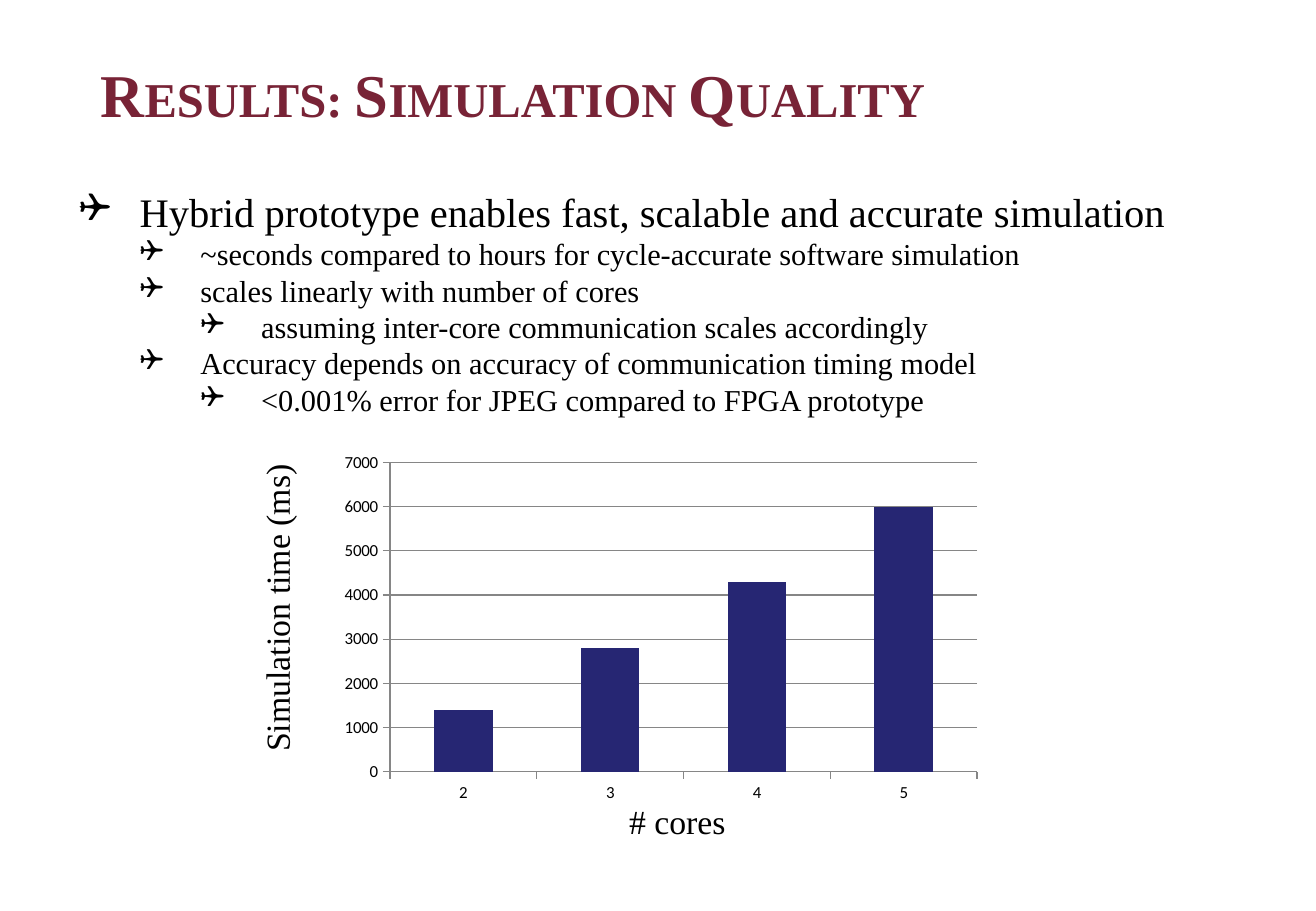
from dataclasses import dataclass

import pptx
import pptx.chart.data
import pptx.dml.color
import pptx.enum.chart
import pptx.enum.text
import pptx.util
from lxml import etree
from pptx.util import Cm, Pt

RGB = pptx.dml.color.RGBColor.from_string
ANCHOR = pptx.enum.text.MSO_ANCHOR
ALIGN = pptx.enum.text.PP_ALIGN


@dataclass(frozen=True)
class Theme:
    text_font: str = "Times New Roman"
    chart_font: str = "Calibri"
    bullet_font: str = "Wingdings"
    heading: str = "782336"
    ink: str = "000000"
    bar: str = "262673"
    grid: str = "868686"
    title_size: int = 36
    level_sizes: tuple = (24, 18, 18)
    axis_title_size: int = 20
    tick_size: int = 10


THEME = Theme()
INDENT = Cm(1.27)

FINDINGS = [
    (0, "Hybrid prototype enables fast, scalable and accurate simulation"),
    (1, "~seconds compared to hours for cycle-accurate software simulation"),
    (1, "scales linearly with number of cores"),
    (2, "assuming inter-core communication scales accordingly"),
    (1, "Accuracy depends on accuracy of communication timing model"),
    (2, "<0.001% error for JPEG compared to FPGA prototype"),
]
SIMULATION_TIMES = {"2": 1400, "3": 2800, "4": 4300, "5": 6000}


def style_font(font, size, color=THEME.ink, name=THEME.text_font, bold=False):
    font.name = name
    font.size = Pt(size)
    font.bold = bold
    font.color.rgb = RGB(color)


def add_run(paragraph, text, size, **style):
    run = paragraph.add_run()
    run.text = text
    style_font(run.font, size, **style)
    return run


def set_bullet(paragraph, level):
    paragraph.level = level
    properties = paragraph._p.get_or_add_pPr()
    properties.set("marL", str(INDENT * (level + 1)))
    properties.set("indent", str(-INDENT))
    for tag, attribute, value in (
        ("a:buFont", "typeface", THEME.bullet_font),
        ("a:buChar", "char", "❑"),
    ):
        etree.SubElement(properties, pptx.oxml.ns.qn(tag)).set(attribute, value)


def set_title(slide, text):
    title = slide.shapes.title
    title.left, title.top = Cm(1.85), Cm(1.07)
    title.width, title.height = Cm(25.15), Cm(3.18)
    frame = title.text_frame
    frame.vertical_anchor = ANCHOR.TOP
    frame.margin_top = Cm(0.12)
    heading = frame.paragraphs[0]
    heading.alignment = ALIGN.LEFT
    run = add_run(heading, text, THEME.title_size, color=THEME.heading, bold=True)
    run._r.get_or_add_rPr().set("cap", "small")


def add_findings(slide, findings):
    box = slide.shapes.add_textbox(Cm(1.4), Cm(3.78), Cm(25.35), Cm(5.13))
    frame = box.text_frame
    frame.word_wrap = True
    for index, (level, text) in enumerate(findings):
        finding = frame.add_paragraph() if index else frame.paragraphs[0]
        set_bullet(finding, level)
        add_run(finding, text, THEME.level_sizes[level])


def add_axis_title(slide, text, left, top, width, rotation=0):
    box = slide.shapes.add_textbox(left, top, width, Cm(1.11))
    box.rotation = rotation
    box.text_frame.word_wrap = False
    add_run(box.text_frame.paragraphs[0], text, THEME.axis_title_size)


def style_axis(axis):
    style_font(axis.tick_labels.font, THEME.tick_size, name=THEME.chart_font)
    axis.format.line.color.rgb = RGB(THEME.grid)
    axis.major_tick_mark = pptx.enum.chart.XL_TICK_MARK.OUTSIDE


def add_time_chart(slide, times):
    data = pptx.chart.data.CategoryChartData()
    data.categories = list(times)
    data.add_series("Series 1", list(times.values()))
    chart = slide.shapes.add_chart(
        pptx.enum.chart.XL_CHART_TYPE.COLUMN_CLUSTERED,
        Cm(6.93), Cm(9.32), Cm(13.77), Cm(7.62), data,
    ).chart
    chart.has_legend = False
    chart.has_title = False
    style_font(chart.font, THEME.tick_size, name=THEME.chart_font)

    columns = chart.plots[0]
    columns.vary_by_categories = False
    columns.gap_width = 150
    fill = columns.series[0].format.fill
    fill.solid()
    fill.fore_color.rgb = RGB(THEME.bar)

    style_axis(chart.category_axis)
    time_axis = chart.value_axis
    style_axis(time_axis)
    time_axis.minimum_scale, time_axis.maximum_scale = 0, 7000
    time_axis.major_unit = 1000
    time_axis.has_major_gridlines = True
    time_axis.major_gridlines.format.line.color.rgb = RGB(THEME.grid)


def main():
    deck = pptx.Presentation()
    deck.slide_width, deck.slide_height = Cm(27.51), Cm(19.05)
    slide = deck.slides.add_slide(deck.slide_layouts.get_by_name("Title Only"))
    set_title(slide, "Results: Simulation Quality")
    add_findings(slide, FINDINGS)
    add_axis_title(slide, "Simulation time (ms)", Cm(2.51), Cm(12.14), Cm(6.55), 270)
    add_axis_title(slide, "# cores", Cm(12.9), Cm(16.61), Cm(2.54))
    add_time_chart(slide, SIMULATION_TIMES)
    deck.save("out.pptx")


if __name__ == "__main__":
    main()
